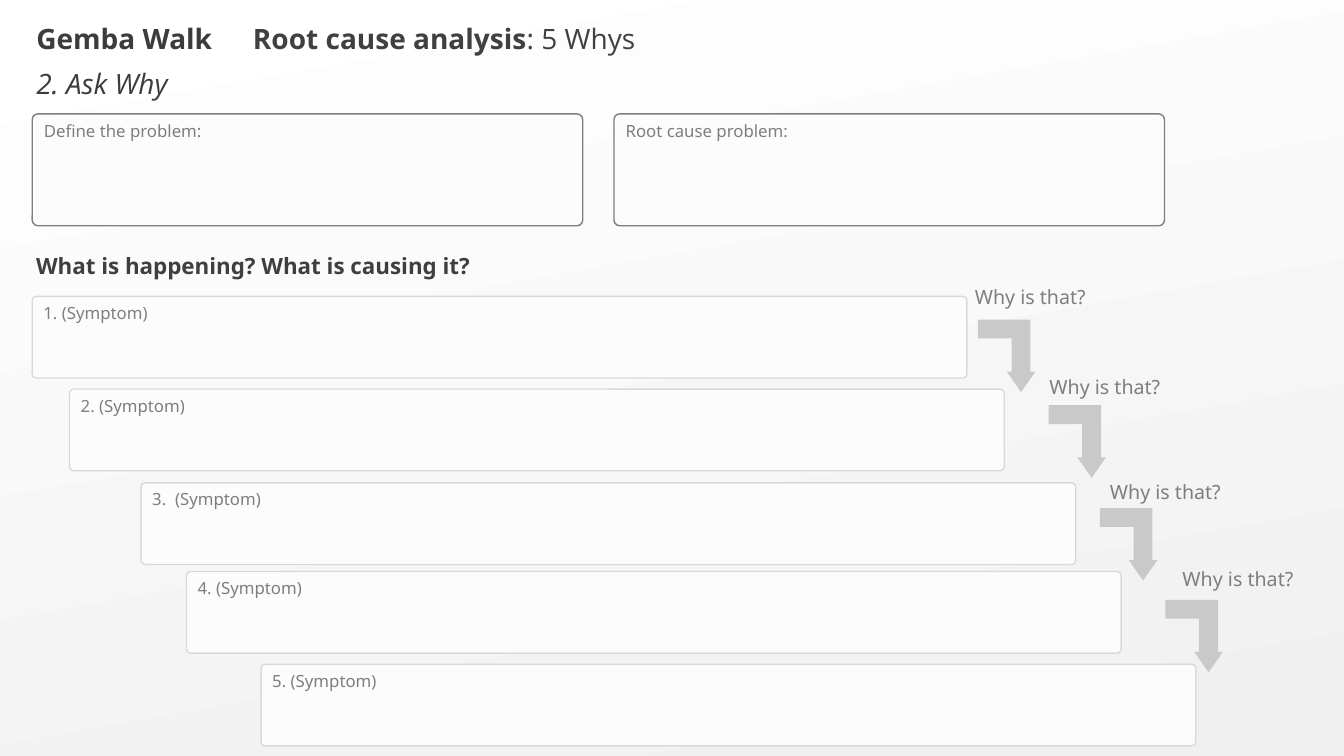
"""Build the Gemba Walk 5 Whys slide."""
from pptx import Presentation
from pptx.dml.color import RGBColor
from pptx.enum.shapes import MSO_SHAPE
from pptx.enum.text import MSO_ANCHOR, MSO_AUTO_SIZE, PP_ALIGN
from pptx.util import Inches, Pt

ROUND = MSO_SHAPE.ROUNDED_RECTANGLE
BENT = MSO_SHAPE.BENT_UP_ARROW
TOP, MIDDLE = MSO_ANCHOR.TOP, MSO_ANCHOR.MIDDLE
FIXED = MSO_AUTO_SIZE.NONE
LEFT = PP_ALIGN.LEFT

SANS, HEAD = "Noto Sans", "Open Sans"
GRAY, DARK, PALE = "7E7E7E", "3F3F3F", "FCFCFC"
EDGE, ARROW = "D9D9D9", "C9C9C9"
BACK = ["FFFFFF", "F0F0F0"]

TITLE = [[("Gemba Walk", "b")], [("2. Ask Why", "i")]]
TOPIC = [[("Root cause analysis", "b"), (": 5 Whys", "")]]
ASK = [[("What is happening? What is causing it?", "b")]]
WHY = "Why is that?"
GOALS = [("Define the problem:", 0.32), ("Root cause problem:", 6.09)]
STEPS = [
    ("1. (Symptom)", 0.32, 2.94),
    ("2. (Symptom)", 0.69, 3.86),
    ("3.  (Symptom)", 1.4, 4.79),
    ("4. (Symptom)", 1.85, 5.67),
    ("5. (Symptom)", 2.59, 6.59),
]
LINKS = [
    ((9.57, 2.78), (9.7, 3.17)),
    ((10.31, 3.67), (10.4, 4.02)),
    ((10.91, 4.71), (10.91, 5.04)),
    ((11.63, 5.58), (11.56, 5.95)),
]


def tint(code):
    return RGBColor.from_string(code)


def write(shape, paras, size=12, font=SANS, color=GRAY, anchor=TOP,
          wrap=True, line=None, before=None):
    """Fill a shape with paragraphs of (text, style) runs."""
    frame = shape.text_frame
    frame.auto_size = FIXED
    frame.word_wrap = wrap
    frame.vertical_anchor = anchor
    for i, runs in enumerate(paras):
        para = frame.add_paragraph() if i else frame.paragraphs[0]
        para.alignment = LEFT
        para.line_spacing = line
        para.space_before = before
        for text, style in runs:
            run = para.add_run()
            run.text = text
            run.font.size = Pt(size)
            run.font.name = font
            run.font.color.rgb = tint(color)
            run.font.bold = style == "b"
            run.font.italic = style == "i"


def draw(kind, area, adjust, fill, edge=None):
    """Add a flat preset shape."""
    shape = slide.shapes.add_shape(kind, *map(Inches, area))
    shape.shadow.inherit = False
    for i, value in enumerate(adjust):
        shape.adjustments[i] = value
    shape.fill.solid()
    shape.fill.fore_color.rgb = tint(fill)
    if edge:
        shape.line.color.rgb = tint(edge)
        shape.line.width = Pt(1)
    else:
        shape.line.fill.background()
    return shape


def label(area, paras, **style):
    """Add a text box."""
    write(slide.shapes.add_textbox(*map(Inches, area)), paras, **style)


deck = Presentation()
deck.slide_width, deck.slide_height = Inches(13.33), Inches(7.5)
slide = deck.slides.add_slide(deck.slide_layouts[5])

back = slide.background.fill
back.gradient()
back.gradient_angle = 280
for stop, code in zip(back.gradient_stops, BACK):
    stop.color.rgb = tint(code)

title = slide.shapes.title
title.left, title.top, title.width, title.height = map(
    Inches, (0.26, 0.19, 2.31, 0.87))
head = dict(size=20, font=HEAD, anchor=MIDDLE, line=0.9, before=Pt(10))
write(title, TITLE, color="3C3C3C", **head)
label((2.41, -0.03, 4.18, 0.87), TOPIC, color="404040", **head)
label((0.26, 2.45, 5.17, 0.37), ASK, size=16, color=DARK)

boxes = [(text, (x, 1.13, 5.46, 1.11), GRAY) for text, x in GOALS]
boxes += [(text, (x, y, 9.27, 0.81), EDGE) for text, x, y in STEPS]
for text, area, edge in boxes:
    write(draw(ROUND, area, [0.051], PALE, edge), [[(text, "")]])

for spot, tip in LINKS:
    label((*spot, 1.33, 0.34), [[(WHY, "")]], size=14, wrap=False)
    arrow = draw(BENT, (*tip, 0.57, 0.72), [0.328, 0.25, 0.358], ARROW)
    arrow.rotation = 180
    arrow.element.spPr.xfrm.set("flipH", "1")

deck.save("out.pptx")
